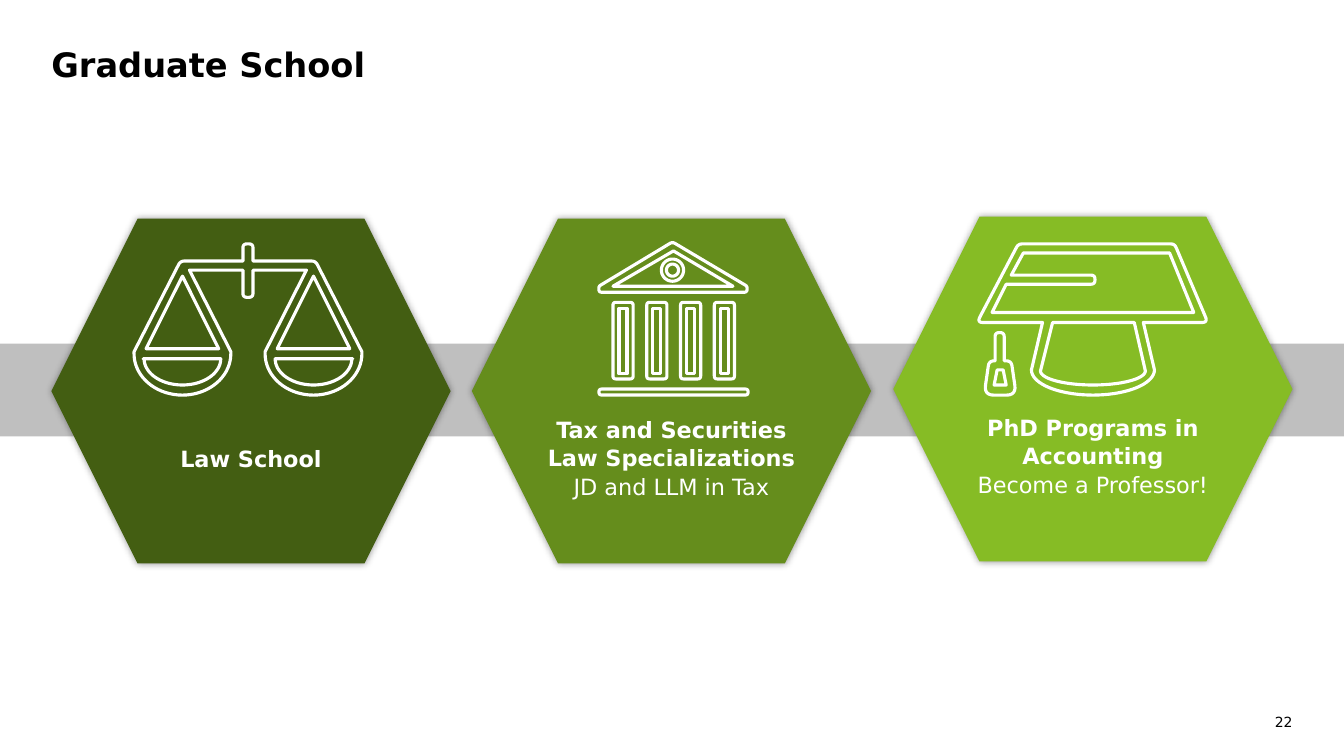
from dataclasses import dataclass
from math import cos, dist, radians, sin

from lxml import etree
from pptx import Presentation
from pptx.dml.color import RGBColor
from pptx.enum.shapes import MSO_SHAPE
from pptx.enum.text import MSO_ANCHOR, PP_ALIGN
from pptx.oxml.ns import qn
from pptx.util import Inches, Pt

HEXAGON, RECT = MSO_SHAPE.HEXAGON, MSO_SHAPE.RECTANGLE
TOP, BOTTOM = MSO_ANCHOR.TOP, MSO_ANCHOR.BOTTOM
LEFT, CENTER, RIGHT = PP_ALIGN.LEFT, PP_ALIGN.CENTER, PP_ALIGN.RIGHT


@dataclass(frozen=True)
class Theme:
    font: str = "DejaVu Sans"
    black: str = "000000"
    white: str = "FFFFFF"
    band: str = "BFBFBF"
    dark: str = "435E12"
    mid: str = "658D1C"
    light: str = "86BC25"
    title: int = 24
    body: int = 16
    small: int = 10
    stroke: float = 2.25


# Outline geometry, in inches
def arc(x, y, rx, ry, end=180, steps=36):
    """Points of an elliptical arc, from the right and through the bottom."""
    turns = [radians(end * i / steps) for i in range(steps + 1)]
    return [(x + rx * cos(t), y + ry * sin(t)) for t in turns]


def bend(points, steps=6):
    """Round each corner that carries a radius as its third value."""
    out = []
    for i, (x, y, *rest) in enumerate(points):
        if not rest:
            out.append((x, y))
            continue
        ends = []
        for near in (points[i - 1], points[(i + 1) % len(points)]):
            part = rest[0] / dist((x, y), near[:2])
            ends.append((x + (near[0] - x) * part, y + (near[1] - y) * part))
        (ax, ay), (bx, by) = ends
        for k in range(steps + 1):
            t = k / steps
            u = 1 - t
            out.append((u * u * ax + 2 * u * t * x + t * t * bx,
                        u * u * ay + 2 * u * t * y + t * t * by))
    return out


def box(x, y, wide, high, curve=0):
    corners = [(x, y), (x + wide, y), (x + wide, y + high), (x, y + high)]
    return [(*c, curve) if curve else c for c in corners]


def flip(points, axis):
    """Mirror the points across a vertical axis, in reverse order."""
    return [(2 * axis - x, *rest) for x, *rest in reversed(points)]


def write(frame, lines, size, color, font, bold=(), align=LEFT, anchor=TOP,
          inset=0, foot=None, space=1.0):
    """Fill a text frame; bold holds the indexes of the bold lines."""
    frame.word_wrap = True
    frame.vertical_anchor = anchor
    frame.margin_left = frame.margin_right = frame.margin_top = Inches(inset)
    frame.margin_bottom = Inches(inset if foot is None else foot)
    for i, line in enumerate(lines):
        para = frame.add_paragraph() if i else frame.paragraphs[0]
        para.alignment = align
        para.line_spacing = space
        run = para.add_run()
        run.text = line
        run.font.name, run.font.size = font, Pt(size)
        run.font.bold = i in bold
        run.font.color.rgb = RGBColor.from_string(color)


class Board:
    def __init__(self, slide, theme):
        self.slide, self.theme = slide, theme

    def paint(self, shape, color, line=None):
        shape.shadow.inherit = False
        shape.fill.solid()
        shape.fill.fore_color.rgb = RGBColor.from_string(color)
        if line:
            shape.line.color.rgb = RGBColor.from_string(line)
            shape.line.width = Pt(self.theme.stroke)
        else:
            shape.line.fill.background()

    def label(self, place, text, size, **style):
        area = self.slide.shapes.add_textbox(*map(Inches, place))
        write(area.text_frame, [text], size, self.theme.black, self.theme.font, **style)

    def band(self, place):
        shape = self.slide.shapes.add_shape(RECT, *map(Inches, place))
        self.paint(shape, self.theme.band)

    def glow(self, shape):
        effects = shape._element.spPr.find(qn("a:effectLst"))
        shade = etree.SubElement(effects, qn("a:outerShdw"), blurRad=str(Pt(5)),
                                 dist="0", dir="0", algn="ctr", rotWithShape="0")
        tint = etree.SubElement(shade, qn("a:srgbClr"), val=self.theme.black)
        etree.SubElement(tint, qn("a:alpha"), val="40000")

    def icon(self, group, color, loops):
        pen = None
        for loop in loops:
            first, *rest = [tuple(map(Inches, p)) for p in bend(loop)]
            if pen is None:
                pen = group.shapes.build_freeform(*first)
            else:
                pen.move_to(*first)
            pen.add_line_segments(rest, close=True)
        self.paint(pen.convert_to_shape(), color, self.theme.white)

    def card(self, left, top, color, lines, icons, foot=0.1):
        group = self.slide.shapes.add_group_shape()
        shape = group.shapes.add_shape(
            HEXAGON, *map(Inches, (left, top, 3.96, 3.42)))
        self.paint(shape, color)
        self.glow(shape)
        write(shape.text_frame, lines, self.theme.body, self.theme.white,
              self.theme.font, bold=(0,), align=CENTER, anchor=BOTTOM,
              inset=0.1, foot=foot, space=1.06)
        for loops in icons:
            self.icon(group, color, loops)


def scales():
    axis = 2.46
    half = [(2.51, 2.42, 0.04), (2.51, 2.59), (3.13, 2.59, 0.04), (3.59, 3.49),
            *arc(3.11, 3.51, 0.48, 0.41), (2.63, 3.49), (3.04, 2.68),
            (2.51, 2.68), (2.51, 2.95, 0.04)]
    cords = [(3.11, 2.74), (3.47, 3.46), (2.75, 3.46)]
    bowl = [(3.5, 3.56), *arc(3.11, 3.56, 0.38, 0.26), (2.73, 3.56)]
    return [[half + flip(half, axis), cords, bowl,
             flip(cords, axis), flip(bowl, axis)]]


def bank():
    columns = [[box(x, 3, 0.2, 0.76, 0.03), box(x + 0.06, 3.06, 0.08, 0.65)]
               for x in (6.08 + 0.335 * i for i in range(4))]
    roof = [[(6.67, 2.4, 0.03), (7.41, 2.84, 0.02), (7.41, 2.9, 0.03),
             (5.94, 2.9, 0.03), (5.94, 2.84, 0.02)],
            [(6.68, 2.49), (7.27, 2.84), (6.08, 2.84)]]
    base = [box(5.94, 3.86, 1.48, 0.06, 0.03)]
    ring = [arc(6.67, 2.68, r, r, 360)[:-1] for r in (0.11, 0.06)]
    return [*columns, roof, base, ring]


def cap():
    tassel = [[(9.87, 3.3, 0.04), (9.96, 3.3, 0.04), (9.96, 3.58),
               (10.03, 3.58, 0.05), (10.08, 3.92, 0.1), (9.76, 3.92, 0.1),
               (9.81, 3.58, 0.05), (9.87, 3.58)],
              [(9.89, 3.67), (9.95, 3.67), (9.98, 3.82), (9.86, 3.82)]]
    edge = [(10.1, 2.42, 0.04), (11.65, 2.42, 0.04), (11.98, 3.2, 0.06),
            (11.34, 3.2), *arc(10.84, 3.67, 0.61, 0.25), (10.34, 3.2),
            (9.69, 3.2, 0.06)]
    crown = [(11.25, 3.2), *arc(10.84, 3.68, 0.52, 0.14), (10.44, 3.2)]
    top = [(9.84, 3.1), (9.98, 2.82), (10.86, 2.82, 0.04), (10.86, 2.73, 0.04),
           (10.03, 2.73), (10.15, 2.51), (11.6, 2.51), (11.84, 3.1)]
    return [tassel, [edge, crown, top]]


def main():
    deck = Presentation()
    deck.slide_width, deck.slide_height = Inches(13.33), Inches(7.5)
    theme = Theme()
    board = Board(deck.slides.add_slide(deck.slide_layouts[6]), theme)

    # Page number, band and title
    board.label((12.48, 7.08, 0.34, 0.17), "22", theme.small, align=RIGHT)
    board.band((0, 3.41, 13.33, 0.92))
    board.label((0.51, 0.44, 12.31, 0.48), "Graduate School", theme.title, bold=(0,))

    # Three paths
    board.card(0.51, 2.17, theme.dark, ["Law School"], scales(), foot=0.38)
    board.card(8.86, 2.15, theme.light,
               ["PhD Programs in Accounting", "Become a Professor!"], cap())
    board.card(4.68, 2.17, theme.mid,
               ["Tax and Securities Law Specializations", "JD and LLM in Tax"], bank())

    deck.save("out.pptx")


if __name__ == "__main__":
    main()
